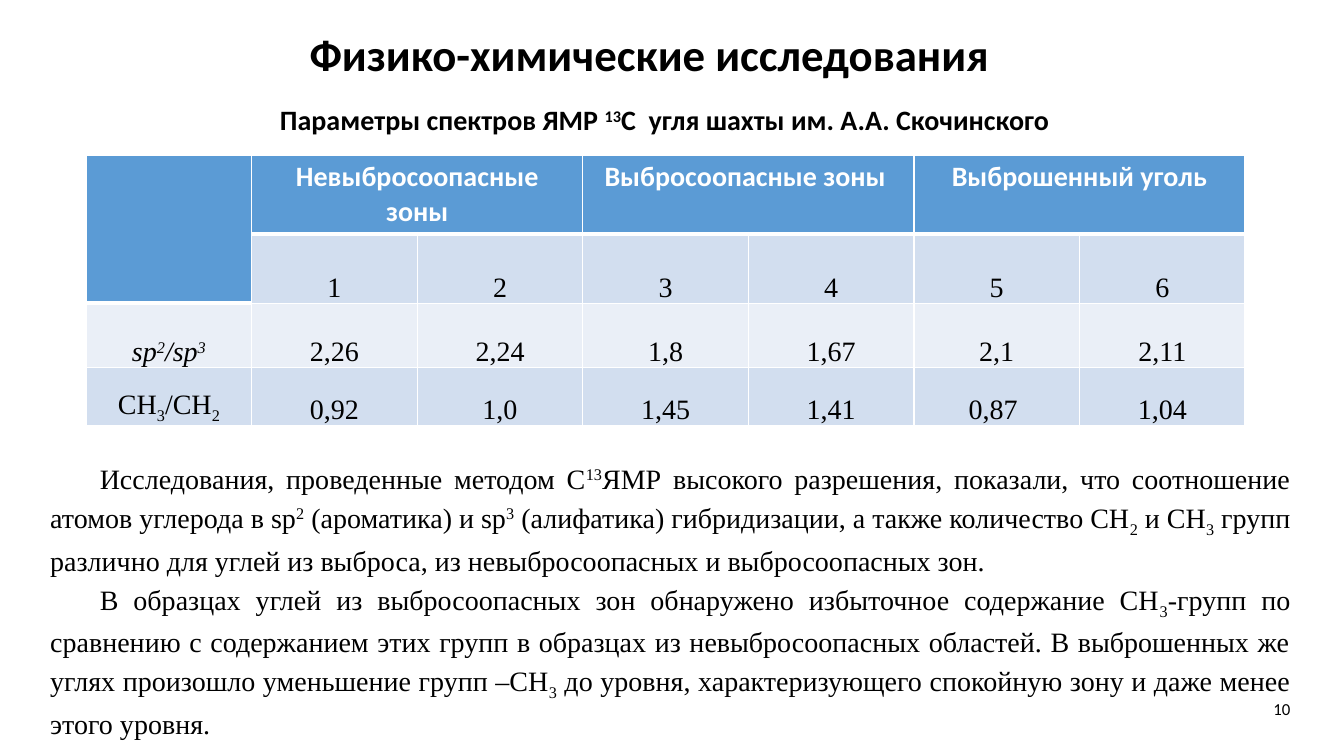
"""Build the slide on NMR spectrum parameters of coal from the Skochinsky mine."""
from lxml.etree import SubElement
from pptx import Presentation
from pptx.dml.color import RGBColor
from pptx.enum.text import MSO_ANCHOR as Anchor, MSO_AUTO_SIZE as AutoSize, PP_ALIGN as Align
from pptx.oxml import parse_xml
from pptx.oxml.ns import nsdecls, qn
from pptx.util import Pt

BLACK = RGBColor(0x00, 0x00, 0x00)
WHITE = RGBColor(0xFF, 0xFF, 0xFF)
HEADER_BLUE = RGBColor(0x5B, 0x9B, 0xD5)
BAND_DARK = RGBColor(0xD2, 0xDE, 0xEF)
BAND_LIGHT = RGBColor(0xEA, 0xEF, 0xF7)
SANS, SERIF = "Calibri", "Times New Roman"
BASELINES = {"^": "30000", "_": "-25000"}


def write(para, text, align, size=20, font=SANS, color=BLACK, bold=False, italic=False, spacing=1.0):
    """Fill a paragraph; pieces between bars that start with ^ or _ are raised or lowered."""
    para.alignment = align
    para.line_spacing = spacing
    for piece in text.split("|"):
        span = para.add_run()
        span.text = piece.lstrip("^_")
        span.font.size = Pt(size)
        span.font.name = font
        span.font.color.rgb = color
        span.font.bold = bold
        span.font.italic = italic
        if piece[0] in BASELINES:
            span.font._element.set("baseline", BASELINES[piece[0]])


def add_box(page, left, top, width, height, anchor=Anchor.TOP):
    """Add a wrapping text box and return its text frame."""
    box = page.shapes.add_textbox(Pt(left), Pt(top), Pt(width), Pt(height))
    frame = box.text_frame
    frame.word_wrap = True
    frame.vertical_anchor = anchor
    return frame


deck = Presentation()
deck.slide_width, deck.slide_height = Pt(960), Pt(540)
page = deck.slides.add_slide(deck.slide_layouts[5])

title = page.shapes.title
title.left, title.top, title.width, title.height = Pt(60.5), Pt(13), Pt(807), Pt(54.7)
title.text_frame.vertical_anchor = Anchor.MIDDLE
title.text_frame.auto_size = AutoSize.NONE
write(title.text_frame.paragraphs[0], "Физико-химические исследования", Align.CENTER, 32, bold=True, spacing=0.9)

headings = {1: "Невыбросоопасные зоны", 3: "Выбросоопасные зоны ", 5: "Выброшенный уголь"}
body_rows = [
    ["", "1", "2", "3", "4", "5", "6"],
    ["sp|^2|/sp|^3", "2,26", "2,24", "1,8", "1,67", "2,1", "2,11"],
    ["CH|_3|/CH|_2", "0,92", "1,0", "1,45", "1,41", "0,87 ", "1,04"],
]
row_heights = [46.8, 49.5, 46, 41.2]
table = page.shapes.add_table(4, 7, Pt(61.5), Pt(110.8), Pt(828), Pt(183.5)).table
for column in table.columns:
    column.width = Pt(828 / 7)
for row, height in zip(table.rows, row_heights):
    row.height = Pt(height)

for row in range(4):
    for col in range(7):
        cell = table.cell(row, col)
        in_header = row == 0 or (row, col) == (1, 0)
        below_header = row == 1 or (row, col) == (2, 0)
        cell.fill.solid()
        cell.fill.fore_color.rgb = HEADER_BLUE if in_header else BAND_LIGHT if row == 2 else BAND_DARK
        widths = {"lnL": 1, "lnR": 1, "lnT": 3 if below_header else 1, "lnB": 3 if in_header else 1}
        for place, (tag, width) in enumerate(widths.items()):
            border = parse_xml(
                f'<a:{tag} {nsdecls("a")} w="{Pt(width)}"><a:solidFill>'
                f'<a:srgbClr val="{WHITE}"/></a:solidFill></a:{tag}>')
            cell._tc.get_or_add_tcPr().insert(place, border)
        para = cell.text_frame.paragraphs[0]
        if row == 0 and col in headings:
            write(para, headings[col], Align.CENTER, color=WHITE, bold=True)
        elif not in_header:
            cell.vertical_anchor = Anchor.BOTTOM
            cell.margin_left = cell.margin_right = Pt(5)
            cell.margin_top = cell.margin_bottom = Pt(0)
            is_ratio = (row, col) == (2, 0)
            write(para, body_rows[row - 1][col], Align.CENTER, font=SERIF, italic=is_ratio, spacing=1.5)

table.cell(0, 0).merge(table.cell(1, 0))
for col in headings:
    table.cell(0, col).merge(table.cell(0, col + 1))

caption = add_box(page, 154, 70, 641.5, 31.5)
write(caption.paragraphs[0], "Параметры спектров ЯМР |^13|С  угля шахты им. А.А. Скочинского", Align.CENTER, bold=True)

number = add_box(page, 876, 492, 52.8, 28.8, Anchor.MIDDLE)
write(number.paragraphs[0], "10", Align.RIGHT, 12)

findings = [
    "Исследования, проведенные методом С|^13|ЯМР высокого разрешения, показали, что соотношение "
    "атомов углерода в sp|^2| (ароматика) и sp|^3| (алифатика) гибридизации, а также количество "
    "СН|_2| и СН|_3| групп различно для углей из выброса, из невыбросоопасных и выбросоопасных зон.",
    "В образцах углей из выбросоопасных зон обнаружено избыточное содержание СН|_3|-групп по "
    "сравнению с содержанием этих групп в образцах из невыбросоопасных областей. В выброшенных же "
    "углях произошло уменьшение групп –СН|_3| до уровня, характеризующего спокойную зону и даже "
    "менее этого уровня.",
]
summary = add_box(page, 28.8, 322.6, 900, 201)
for index, finding in enumerate(findings):
    para = summary.add_paragraph() if index else summary.paragraphs[0]
    write(para, finding, Align.JUSTIFY, font=SERIF, spacing=1.14)
    para._p.get_or_add_pPr().set("indent", str(Pt(35.4)))

deck.save("out.pptx")
